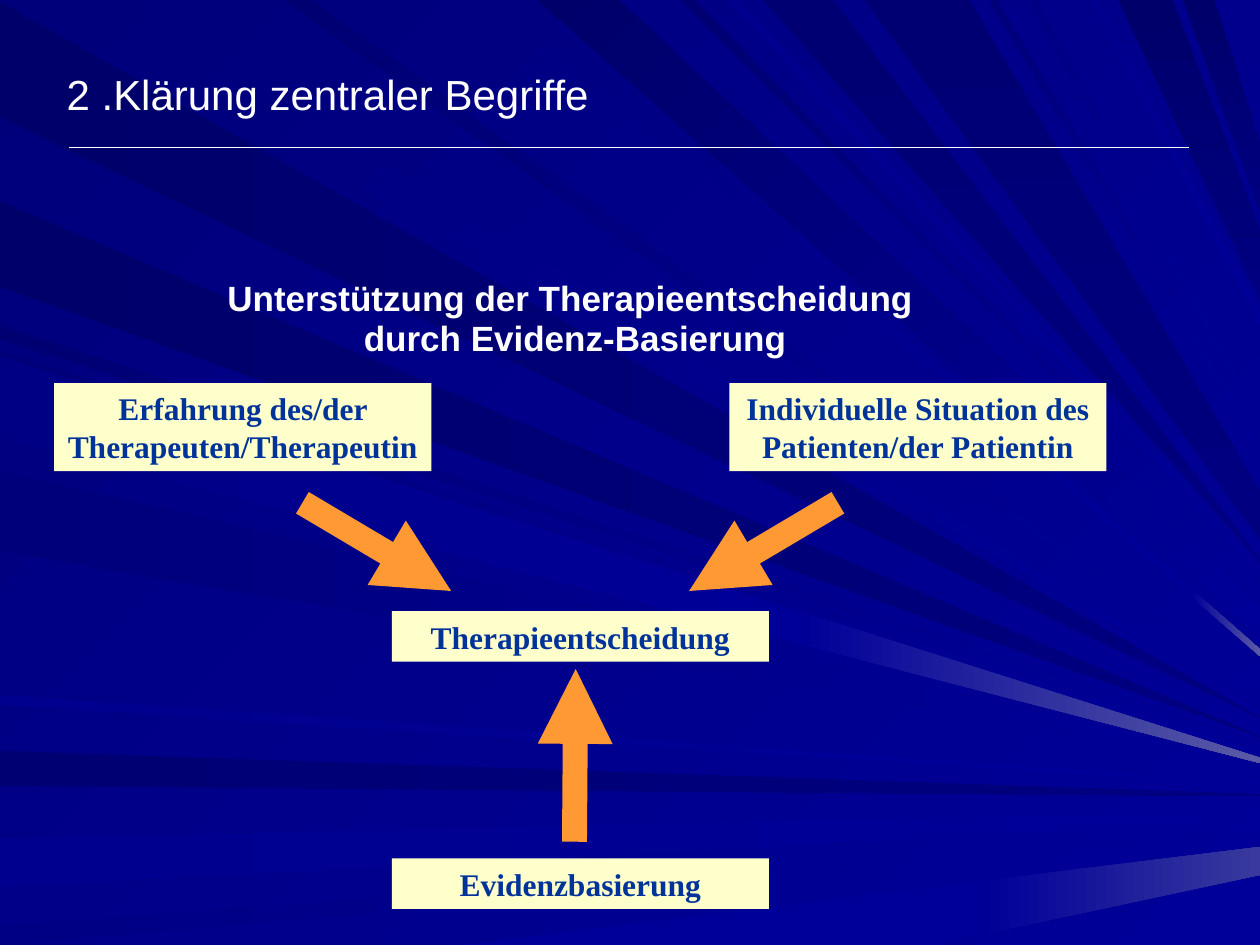
from lxml import etree
from pptx import Presentation
from pptx import util as u
from pptx.dml.color import RGBColor
from pptx.enum import shapes, text
from pptx.oxml.ns import qn

Pt = u.Pt
WIDTH, HEIGHT = 720, 540

COLORS = {
    "white": "FFFFFF", "cream": "FFFFCC", "label": "003399", "orange": "FF9933",
    "night": "00006B", "deep": "000073", "dusk": "00007B", "navy": "000080",
    "royal": "000085", "blue": "00008E", "bright": "000099", "haze": "5A5AA6",
    "mist": "39399E",
}

# Background rays: edge they start on, their upper and lower side there,
# upper and lower side at the right edge, first and last colour
RAYS = [
    ("left", 1, 67, 410, 410, "night", "navy"),
    ("top", 73, 19, 405, 405, "dusk", "bright"),
    ("left", 429, 449, 454, 455, "deep", "navy"),
    ("left", 479, 507, 463, 469, "blue", "bright"),
    ("left", 529, 540, 477, 477, "royal", "bright"),
    ("bottom", 262, 534, 484, 500, "bright", "bright"),
    ("left", 186, 194, 424, 424, "deep", "bright"),
    ("left", 115, 164, 421, 421, "night", "navy"),
    ("top", 300, 287, 371, 375, "navy", "bright"),
    ("top", 354, 307, 345, 365, "night", "bright"),
    ("top", 397, 389, 333, 333, "deep", "bright"),
    ("top", 476, 436, 320, 321, "deep", "navy"),
    ("top", 670, 639, 132, 171, "night", "navy"),
    ("top", 694, 676, 82, 120, "night", "navy"),
    ("left", 200, 246, 429, 433, "dusk", "bright"),
    ("left", 269, 315, 436, 436, "dusk", "bright"),
    ("left", 397, 403, 447, 449, "blue", "bright"),
    ("top", 178, 162, 394, 397, "deep", "bright"),
    ("top", 423, 415, 326, 327, "blue", "bright"),
    ("top", 554, 494, 281, 308, "deep", "navy"),
    ("top", 570, 565, 255, 259, "dusk", "bright"),
    ("top", 593, 587, 241, 242, "royal", "bright"),
    ("top", 628, 623, 179, 186, "blue", "bright"),
    ("left", 204, 250, 433, 436, "royal", "bright"),
]
# Hazy ray ends: position of the ray, where the haze starts, its colour
HAZE = {5: (560, "mist"), 8: (681, "haze"), 23: (457, "haze")}

TITLE = "2 .Klärung zentraler Begriffe"
SUBTITLE = ["Unterstützung der Therapieentscheidung ", "durch Evidenz-Basierung"]

# Label boxes: text, left, top, height
LABEL_WIDTH = 215.5
LEFT, MIDDLE, RIGHT = 31, 223.9, 416.8
TALL, LOW = 50.4, 28.8
LABELS = [
    ("Erfahrung des/der Therapeuten/Therapeutin", LEFT, 218.9, TALL),
    ("Individuelle Situation des Patienten/der Patientin", RIGHT, 218.9, TALL),
    ("Therapieentscheidung", MIDDLE, 349.3, LOW),
    ("Evidenzbasierung", MIDDLE, 490.6, LOW),
]
AXIS = 325.8  # the two upper arrows mirror each other around it
SIDE_ARROW = (172.8, 287.3, 257.8, 337.7)
RISING_ARROW = (328.3, 481, 329, 382.3)


def rgb(name):
    return RGBColor.from_string(COLORS[name])


def paint(fill, first, last, angle=0):
    if first == last:
        fill.solid()
        fill.fore_color.rgb = rgb(first)
        return
    fill.gradient()
    fill.gradient_angle = 360 - angle  # python-pptx counts counter-clockwise
    for stop, name in zip(fill.gradient_stops, (first, last)):
        stop.color.rgb = rgb(name)


def add_polygon(slide, points, first, last, angle):
    corners = [(Pt(x), Pt(y)) for x, y in points]
    builder = slide.shapes.build_freeform(*corners[0])
    builder.add_line_segments(corners[1:], close=True)
    shape = builder.convert_to_shape()
    shape.shadow.inherit = False
    paint(shape.fill, first, last, angle)
    shape.line.fill.background()


def point_at(start, end, x):
    share = (x - start[0]) / (end[0] - start[0])
    return x, start[1] + share * (end[1] - start[1])


def add_ray(slide, ray, haze):
    edge, start_a, start_b, end_a, end_b, first, last = ray
    if edge == "left":
        starts, angle = [(0, start_a), (0, start_b)], 0
    else:
        y = 0 if edge == "top" else HEIGHT
        starts = [(start_a, y), (start_b, y)]
        angle = 90 if last == "navy" else 45
    ends = [(WIDTH, end_a), (WIDTH, end_b)]
    if haze:
        x, color = haze
        cut = [point_at(start, end, x) for start, end in zip(starts, ends)]
        add_polygon(slide, cut + ends[::-1], last, color, 0)
        ends = cut
    add_polygon(slide, starts + ends[::-1], first, last, angle)


def add_line(slide, ends, color, width, arrow=False):
    line = slide.shapes.add_connector(
        shapes.MSO_CONNECTOR.STRAIGHT, *(Pt(value) for value in ends))
    line.line.color.rgb = rgb(color)
    line.line.width = Pt(width)
    if arrow:
        outline = line._element.spPr.find(qn("a:ln"))
        etree.SubElement(outline, qn("a:tailEnd"), type="triangle")
    etree.SubElement(line._element.spPr, qn("a:effectLst"))


def write(shape, lines, font_name, size, color, bold, align):
    frame = shape.text_frame
    frame.word_wrap = True
    frame.text = "\n".join(lines)
    for paragraph in frame.paragraphs:
        paragraph.alignment = align
        for run in paragraph.runs:
            run.font.name = font_name
            run.font.size = Pt(size)
            run.font.bold = bold
            run.font.color.rgb = rgb(color)
    return frame


def add_text_box(slide, box, lines, size, bold, align):
    shape = slide.shapes.add_textbox(*(Pt(value) for value in box))
    return write(shape, lines, "Arial", size, "white", bold, align)


def add_label(slide, label, left, top, height):
    shape = slide.shapes.add_shape(
        shapes.MSO_SHAPE.RECTANGLE, Pt(left), Pt(top), Pt(LABEL_WIDTH), Pt(height))
    shape.shadow.inherit = False
    paint(shape.fill, "cream", "cream")
    shape.line.fill.background()
    frame = write(shape, [label], "Times New Roman", 18, "label", True,
                  text.PP_ALIGN.CENTER)
    frame.vertical_anchor = text.MSO_ANCHOR.MIDDLE


def main():
    presentation = Presentation()
    presentation.slide_width, presentation.slide_height = Pt(WIDTH), Pt(HEIGHT)
    slide = presentation.slides.add_slide(presentation.slide_layouts[6])

    # Background
    paint(slide.background.fill, "dusk", "bright", 45)
    for index, ray in enumerate(RAYS):
        add_ray(slide, ray, HAZE.get(index))

    # Title and rule
    add_line(slide, (39.6, 84.2, 679.7, 84.2), "white", 0.5)
    frame = add_text_box(slide, (31, 31.7, 648, 141), [TITLE], 24, False,
                         text.PP_ALIGN.LEFT)
    frame.margin_top = Pt(7.2)

    # Subtitle
    frame = add_text_box(slide, (25.2, 157, 607, 73.4), SUBTITLE, 20, True,
                         text.PP_ALIGN.CENTER)
    frame.margin_top = Pt(5.5)
    for paragraph in frame.paragraphs:
        paragraph.line_spacing = 0.8
    frame.paragraphs[1].space_before = Pt(4)

    # Diagram
    for label in LABELS:
        add_label(slide, *label)
    x1, y1, x2, y2 = SIDE_ARROW
    mirrored = (2 * AXIS - x1, y1, 2 * AXIS - x2, y2)
    for ends in (SIDE_ARROW, mirrored, RISING_ARROW):
        add_line(slide, ends, "orange", 14.25, arrow=True)

    presentation.save("out.pptx")


if __name__ == "__main__":
    main()
